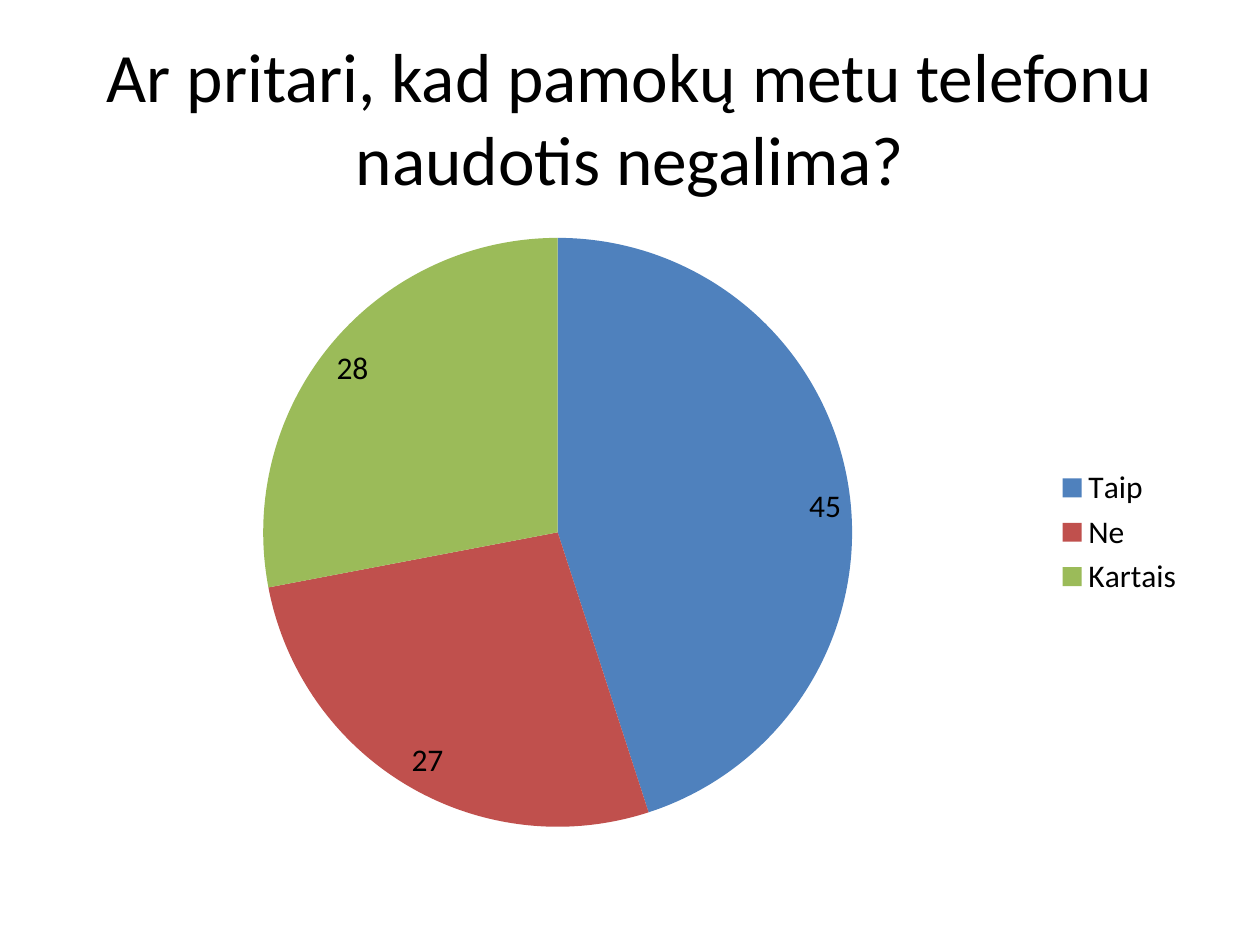
from pptx import Presentation
from pptx.chart.data import CategoryChartData
from pptx.dml.color import RGBColor
from pptx.enum.chart import XL_CHART_TYPE, XL_LABEL_POSITION, XL_LEGEND_POSITION
from pptx.enum.text import MSO_ANCHOR, MSO_AUTO_SIZE, PP_ALIGN
from pptx.util import Inches, Pt

FONT = "Calibri"
COLORS = {"text": "000000", "Taip": "4F81BD", "Ne": "C0504D", "Kartais": "9BBB59"}
ANSWERS = {"Taip": 45, "Ne": 27, "Kartais": 28}


def style_font(font, size):
    font.name = FONT
    font.size = Pt(size)
    font.color.rgb = RGBColor.from_string(COLORS["text"])


def place_title(page, box, text):
    title = page.shapes.title
    title.left, title.top, title.width, title.height = box
    frame = title.text_frame
    frame.text = text
    frame.word_wrap = True
    frame.auto_size = MSO_AUTO_SIZE.NONE
    frame.vertical_anchor = MSO_ANCHOR.MIDDLE
    para = frame.paragraphs[0]
    para.alignment = PP_ALIGN.CENTER
    style_font(para.font, 39.6)


def place_answer_pie(page, box, answers):
    data = CategoryChartData()
    data.categories = list(answers)
    data.add_series("Series 1", list(answers.values()))
    chart = page.shapes.add_chart(XL_CHART_TYPE.PIE, *box, data).chart
    style_font(chart.font, 18)
    chart.has_title = False
    chart.has_legend = True
    chart.legend.position = XL_LEGEND_POSITION.RIGHT
    chart.legend.include_in_layout = False

    plot = chart.plots[0]
    plot.vary_by_categories = True
    for index, answer in enumerate(answers):
        fill = plot.series[0].points[index].format.fill
        fill.solid()
        fill.fore_color.rgb = RGBColor.from_string(COLORS[answer])

    plot.has_data_labels = True
    labels = plot.data_labels
    labels.show_value = True
    labels.show_percentage = False
    labels.position = XL_LABEL_POSITION.INSIDE_END
    style_font(labels.font, 18)


def main():
    deck = Presentation()
    deck.slide_width, deck.slide_height = Inches(10), Inches(7.5)
    page = deck.slides.add_slide(deck.slide_layouts[5])
    margin, width = Inches(0.5), Inches(9)
    place_title(
        page,
        (margin, Inches(0.3), width, Inches(1.25)),
        "Ar pritari, kad pamokų metu telefonu naudotis negalima?",
    )
    place_answer_pie(page, (margin, Inches(1.75), width, Inches(4.95)), ANSWERS)
    deck.save("out.pptx")


if __name__ == "__main__":
    main()
